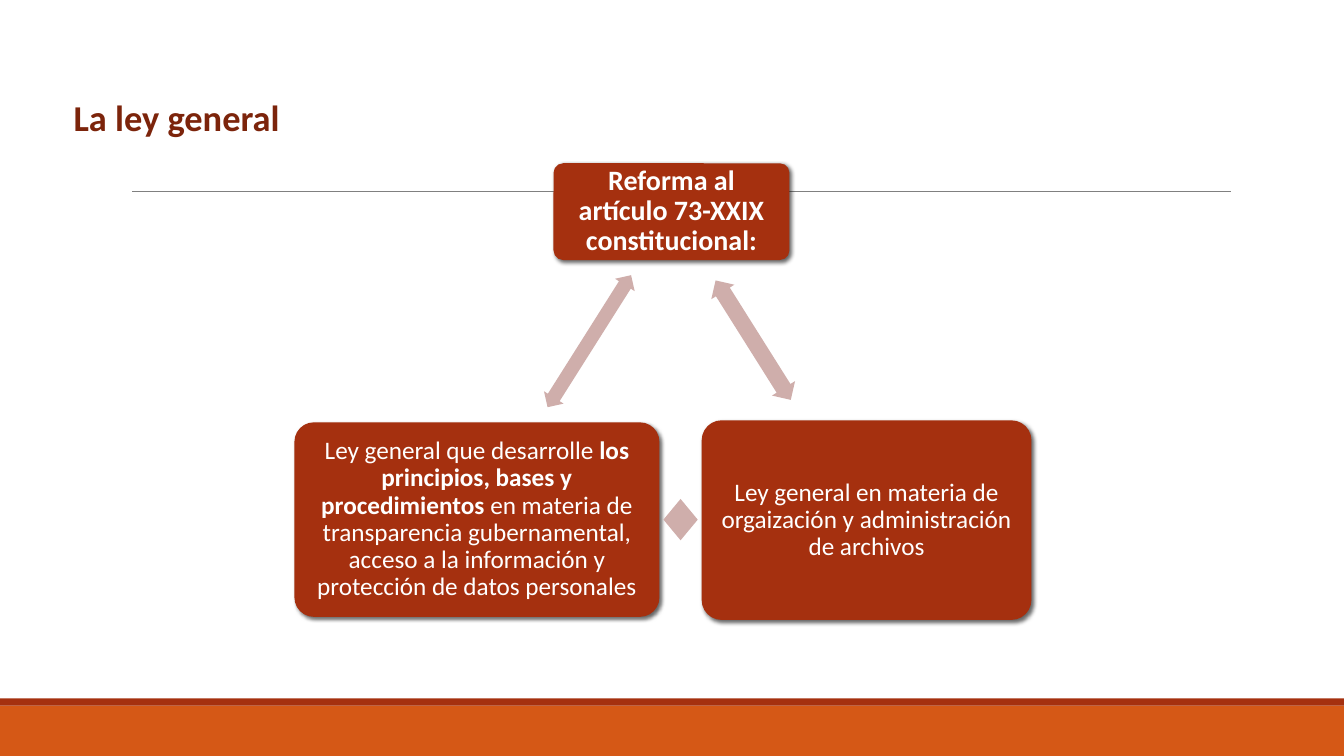
from lxml import etree
from pptx import Presentation
from pptx.dml.color import RGBColor
from pptx.enum import shapes, text
from pptx.oxml import ns
from pptx.util import Inches, Pt

WHITE = RGBColor(0xFF, 0xFF, 0xFF)
RUST = RGBColor(0xA5, 0x30, 0x0F)
ORANGE = RGBColor(0xD5, 0x58, 0x16)
DARK_RUST = RGBColor(0x7C, 0x24, 0x0B)
PINK = RGBColor(0xCF, 0xAE, 0xAB)
GRAY = RGBColor(0x80, 0x80, 0x80)
FONT = "Calibri"


def add_run(paragraph, words, size, color, bold=False):
    run = paragraph.add_run()
    run.text = words
    run.font.name = FONT
    run.font.size = Pt(size)
    run.font.bold = bold
    run.font.color.rgb = color


def add_filled(slide, preset, bounds, color):
    filled = slide.shapes.add_shape(preset, *map(Inches, bounds))
    filled.shadow.inherit = False
    filled.fill.solid()
    filled.fill.fore_color.rgb = color
    filled.line.fill.background()
    return filled


def add_soft_shadow(card):
    effects = card._element.spPr.find(ns.qn("a:effectLst"))
    shadow = etree.SubElement(
        effects, ns.qn("a:outerShdw"), blurRad=str(Pt(3)), dist=str(Pt(2)),
        dir=str(45 * 60000), algn="ctr", rotWithShape="0")
    black = etree.SubElement(shadow, ns.qn("a:srgbClr"), val="000000")
    etree.SubElement(black, ns.qn("a:alpha"), val="60000")


def add_card(slide, bounds, runs, size, inset):
    card = add_filled(slide, shapes.MSO_SHAPE.ROUNDED_RECTANGLE, bounds, RUST)
    card.adjustments[0] = 0.1
    add_soft_shadow(card)
    frame = card.text_frame
    frame.word_wrap = True
    frame.vertical_anchor = text.MSO_ANCHOR.MIDDLE
    frame.margin_left = frame.margin_right = Inches(inset)
    frame.margin_top = frame.margin_bottom = Inches(inset)
    paragraph = frame.paragraphs[0]
    paragraph.alignment = text.PP_ALIGN.CENTER
    paragraph.line_spacing = 0.9
    for words, bold in runs:
        add_run(paragraph, words, size, WHITE, bold)


def add_double_arrow(slide, bounds, rotation):
    arrow = add_filled(slide, shapes.MSO_SHAPE.LEFT_RIGHT_ARROW, bounds, PINK)
    arrow.adjustments[0] = 0.6
    arrow.adjustments[1] = 0.5
    arrow.rotation = rotation


def add_rule(slide, left, right, y):
    rule = slide.shapes.add_connector(
        shapes.MSO_CONNECTOR.STRAIGHT,
        Inches(left), Inches(y), Inches(right), Inches(y))
    rule.line.color.rgb = GRAY
    rule.line.width = Pt(0.5)
    etree.SubElement(rule._element.spPr, ns.qn("a:effectLst"))


def set_title(slide, words):
    title = slide.shapes.title
    title.left, title.top = Inches(0.63), Inches(0.89)
    title.width, title.height = Inches(10.81), Inches(0.54)
    frame = title.text_frame
    frame.auto_size = text.MSO_AUTO_SIZE.NONE
    frame.vertical_anchor = text.MSO_ANCHOR.TOP
    paragraph = frame.paragraphs[0]
    paragraph.alignment = text.PP_ALIGN.LEFT
    add_run(paragraph, words, 26, DARK_RUST, True)


def main():
    deck = Presentation()
    deck.slide_width, deck.slide_height = Inches(13.33), Inches(7.5)
    slide = deck.slides.add_slide(deck.slide_layouts[5])

    # Footer bands and heading rule
    rectangle = shapes.MSO_SHAPE.RECTANGLE
    add_filled(slide, rectangle, (0, 7, 13.33, 0.5), ORANGE)
    add_filled(slide, rectangle, (0, 6.93, 13.33, 0.07), RUST)
    add_rule(slide, 1.31, 12.21, 1.9)
    set_title(slide, "La ley general")

    # Cycle: the reform and the two general laws
    add_card(slide, (5.49, 1.62, 2.34, 0.96),
             [("Reforma al artículo 73-XXIX constitucional:", True)], 20, 0.08)
    add_card(slide, (6.96, 4.17, 3.27, 1.98),
             [("Ley general en materia de orgaización y administración "
               "de archivos", False)], 18, 0.07)
    add_card(slide, (2.92, 4.19, 3.62, 1.93),
             [("Ley general que desarrolle ", False),
              ("los principios, bases y procedimientos", True),
              (" en materia de transparencia gubernamental, acceso a la "
               "información y protección de datos personales", False)],
             18, 0.07)

    # Arrows between the cards
    add_double_arrow(slide, (6.77, 3.24, 1.4, 0.27), 57.8)
    add_double_arrow(slide, (6.58, 4.95, 0.34, 0.41), 180)
    add_double_arrow(slide, (5.07, 3.27, 1.55, 0.23), 302.3)

    deck.save("out.pptx")


if __name__ == "__main__":
    main()
